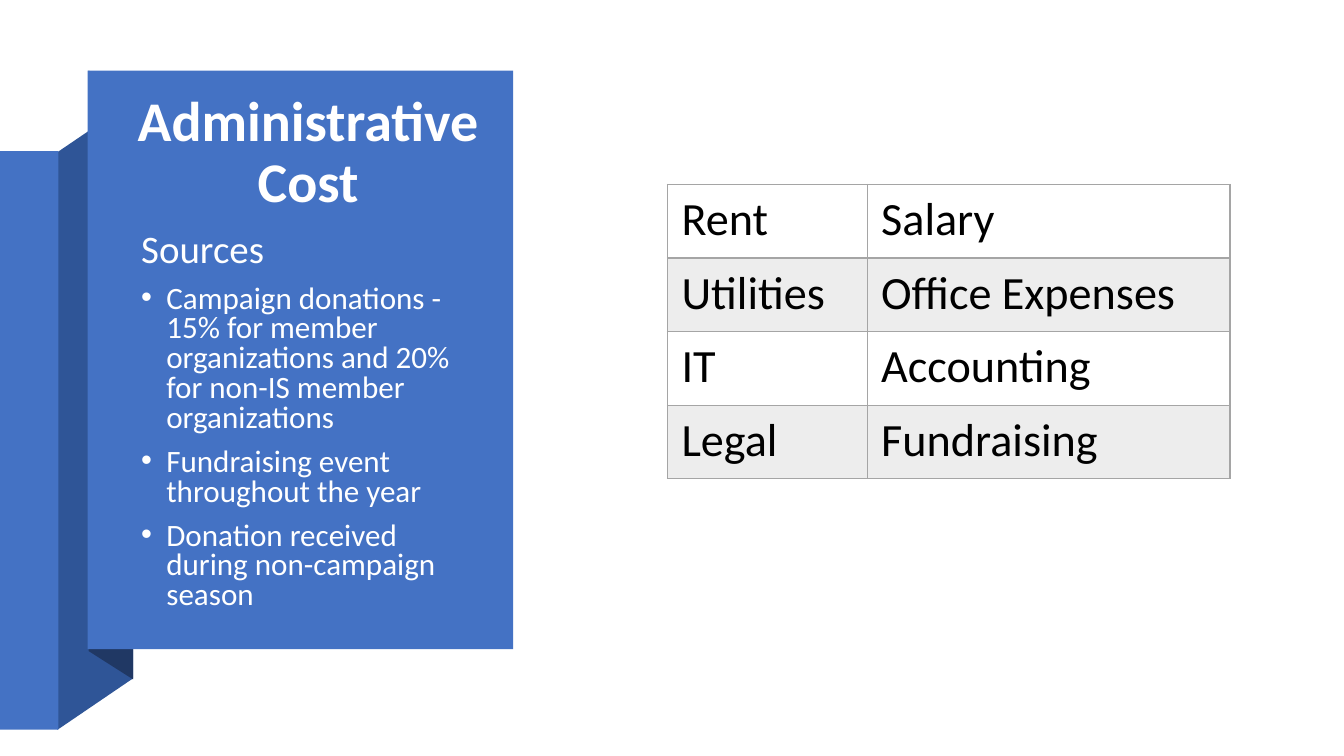
from lxml.etree import SubElement
from pptx import Presentation
from pptx.dml.color import RGBColor
from pptx.enum.shapes import MSO_SHAPE
from pptx.enum.text import MSO_ANCHOR, MSO_AUTO_SIZE, PP_ALIGN
from pptx.oxml.ns import qn
from pptx.util import Inches, Pt

WHITE = RGBColor(0xFF, 0xFF, 0xFF)
BLACK = RGBColor(0x00, 0x00, 0x00)
BLUE = RGBColor(0x44, 0x72, 0xC4)
FOLD_BLUE = RGBColor(0x2F, 0x55, 0x97)
SHADOW_BLUE = RGBColor(0x20, 0x38, 0x64)
BORDER_GREY = RGBColor(0xA5, 0xA5, 0xA5)
BAND_GREY = RGBColor(0xED, 0xED, 0xED)

SOURCES = [
    "Campaign donations - 15% for member organizations and 20% for non-IS member organizations",
    "Fundraising event throughout the year",
    "Donation received during non-campaign season",
]
COSTS = [
    ("Rent", "Salary"),
    ("Utilities", "Office Expenses"),
    ("IT", "Accounting"),
    ("Legal", "Fundraising"),
]


class RibbonSlide:
    font = "Calibri"

    def __init__(self, deck):
        self.page = deck.slides.add_slide(deck.slide_layouts[1])
        self.shapes = self.page.shapes

    def paint(self, shape, color):
        shape.shadow.inherit = False
        shape.fill.solid()
        shape.fill.fore_color.rgb = color
        shape.line.fill.background()

    def panel(self, left, top, width, height, color):
        box = self.shapes.add_shape(
            MSO_SHAPE.RECTANGLE, Inches(left), Inches(top), Inches(width), Inches(height))
        self.paint(box, color)

    def fold(self, points, color):
        corners = [(Inches(x), Inches(y)) for x, y in points]
        builder = self.shapes.build_freeform(*corners[0])
        builder.add_line_segments(corners[1:], close=True)
        self.paint(builder.convert_to_shape(), color)

    def add_text(self, para, text, size, color, bold=False):
        span = para.add_run()
        span.text = text
        span.font.name = self.font
        span.font.size = Pt(size)
        span.font.bold = bold
        span.font.color.rgb = color

    def place(self, box, left, top, width, height, anchor):
        box.left, box.top = Inches(left), Inches(top)
        box.width, box.height = Inches(width), Inches(height)
        frame = box.text_frame
        frame.word_wrap = True
        frame.auto_size = MSO_AUTO_SIZE.NONE
        frame.vertical_anchor = anchor
        self.shapes._spTree.append(box._element)
        return frame

    def title(self, text, *area):
        frame = self.place(self.shapes.title, *area, MSO_ANCHOR.MIDDLE)
        para = frame.paragraphs[0]
        para.alignment = PP_ALIGN.CENTER
        para.line_spacing = 0.9
        self.add_text(para, text, 40, WHITE, bold=True)

    def body(self, heading, items, *area):
        frame = self.place(self.page.placeholders[1], *area, MSO_ANCHOR.TOP)
        self.body_line(frame.paragraphs[0], heading, 27.8, None)
        for item in items:
            self.body_line(frame.add_paragraph(), item, 22.2, "•")

    def body_line(self, para, text, size, bullet):
        para.line_spacing = 0.8
        para.space_before = Pt(10)
        properties = para._p.get_or_add_pPr()
        indent = Inches(0.25) if bullet else 0
        properties.set("marL", str(indent))
        properties.set("indent", str(-indent))
        if bullet:
            SubElement(properties, qn("a:buFont"), typeface="Arial")
            SubElement(properties, qn("a:buChar"), char=bullet)
        else:
            SubElement(properties, qn("a:buNone"))
        self.add_text(para, text, size, WHITE)

    def table(self, rows, left, top, column_widths, row_height):
        frame = self.shapes.add_table(
            len(rows), len(column_widths), Inches(left), Inches(top),
            Inches(sum(column_widths)), Inches(row_height * len(rows)))
        grid = frame.table
        grid.first_row = False
        grid.horz_banding = False
        for column, width in zip(grid.columns, column_widths):
            column.width = Inches(width)
        for index, texts in enumerate(rows):
            grid.rows[index].height = Inches(row_height)
            for column, text in enumerate(texts):
                self.cell(grid.cell(index, column), text, index)

    def cell(self, cell, text, row):
        cell.margin_left = cell.margin_right = Inches(0.14)
        cell.margin_top = cell.margin_bottom = Inches(0.07)
        if row % 2:
            cell.fill.solid()
            cell.fill.fore_color.rgb = BAND_GREY
        else:
            cell.fill.background()
        widths = {"L": 1, "R": 1, "T": 2 if row == 1 else 1, "B": 2 if row == 0 else 1}
        properties = cell._tc.get_or_add_tcPr()
        for position, (side, width) in enumerate(widths.items()):
            line = SubElement(properties, qn(f"a:ln{side}"), w=str(Pt(width)))
            fill = SubElement(line, qn("a:solidFill"))
            SubElement(fill, qn("a:srgbClr"), val=str(BORDER_GREY))
            properties.insert(position, line)
        self.add_text(cell.text_frame.paragraphs[0], text, 33, BLACK)


def main():
    deck = Presentation()
    deck.slide_width, deck.slide_height = Inches(13.33), Inches(7.5)
    slide = RibbonSlide(deck)
    slide.fold([(0.57, 7.24), (1.32, 6.73), (1.32, 1), (0.57, 1.51)], FOLD_BLUE)
    slide.panel(0, 1.5, 0.58, 5.74, BLUE)
    slide.fold([(0.88, 6.46), (1.32, 6.74), (1.32, 0.99), (0.88, 0.7)], SHADOW_BLUE)
    slide.panel(0.87, 0.7, 4.22, 5.74, BLUE)
    slide.title("Administrative Cost", 1.23, 0.78, 3.65, 1.49)
    slide.body("Sources", SOURCES, 1.3, 2.27, 3.5, 3.99)
    slide.table(COSTS, 6.62, 1.83, (1.98, 3.6), 0.73)
    deck.save("out.pptx")


if __name__ == "__main__":
    main()
